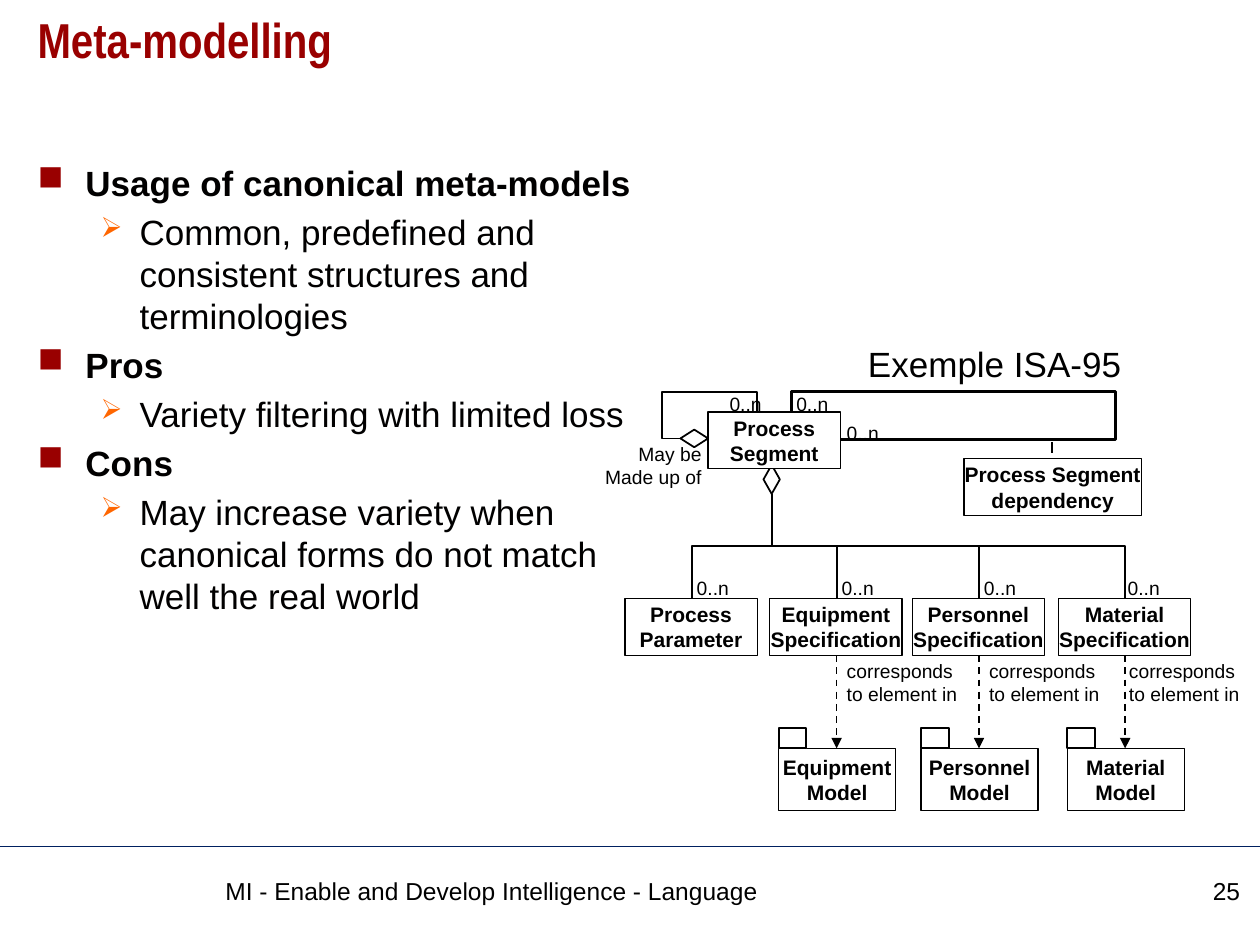
from dataclasses import dataclass
from typing import Optional

from lxml import etree
from pptx import Presentation
from pptx.dml.color import RGBColor
from pptx.enum.dml import MSO_LINE
from pptx.enum.shapes import MSO_CONNECTOR, MSO_SHAPE
from pptx.enum.text import MSO_ANCHOR, PP_ALIGN
from pptx.oxml.ns import qn
from pptx.util import Emu, Pt

EMU_PER_PX = 9144
BLACK = RGBColor(0x00, 0x00, 0x00)
WHITE = RGBColor(0xFF, 0xFF, 0xFF)
BODY_INK = RGBColor(0x01, 0x00, 0x00)
DARK_RED = RGBColor(0x99, 0x00, 0x00)
ORANGE = RGBColor(0xFF, 0x66, 0x00)
NAVY = RGBColor(0x00, 0x20, 0x60)
LEFT, CENTER, RIGHT = PP_ALIGN.LEFT, PP_ALIGN.CENTER, PP_ALIGN.RIGHT
TOP, MIDDLE = MSO_ANCHOR.TOP, MSO_ANCHOR.MIDDLE
RECTANGLE, DIAMOND = MSO_SHAPE.RECTANGLE, MSO_SHAPE.DIAMOND
STRAIGHT, ELBOW = MSO_CONNECTOR.STRAIGHT, MSO_CONNECTOR.ELBOW
DASH = MSO_LINE.DASH

ENTITY_WIDTH, ENTITY_HEIGHT = 105, 45
SPEC_TOP, MODEL_TOP = 475, 594
HUB = (613, 392)
MANY = "0..n"


@dataclass(frozen=True)
class Box:
    left: int
    top: int
    width: int
    height: int


@dataclass(frozen=True)
class Level:
    bullet: str
    color: RGBColor
    size: int
    margin: int
    hanging: int
    bold: bool


@dataclass(frozen=True)
class Branch:
    left: int
    entity: str
    many_left: int
    model: Optional[str] = None
    relation_left: int = 0


POINT = Level("■", DARK_RED, 100, 38, 38, True)
DETAIL = Level("➢", ORANGE, 80, 81, 31, False)
OUTLINE = [
    (POINT, "Usage of canonical meta-models"),
    (DETAIL, "Common, predefined and consistent structures and terminologies"),
    (POINT, "Pros"),
    (DETAIL, "Variety filtering with limited loss"),
    (POINT, "Cons"),
    (DETAIL, "May increase variety when canonical forms do not match well the real world"),
]
BRANCHES = [
    Branch(496, "Process\nParameter", 553),
    Branch(611, "Equipment\nSpecification", 668, "Equipment\nModel", 672),
    Branch(724, "Personnel\nSpecification", 781, "Personnel\nModel", 785),
    Branch(840, "Material\nSpecification", 895, "Material\nModel", 896),
]


def px(length: float) -> Emu:
    return Emu(round(length * EMU_PER_PX))


def frame(box: Box) -> tuple:
    return px(box.left), px(box.top), px(box.width), px(box.height)


def write(holder, text: str, *, size: int, color=BLACK, font="Arial", bold=False,
          align=LEFT, anchor=TOP, inset=(10, 5), wrap=True, line_spacing=None) -> None:
    area = holder.text_frame
    area.word_wrap = wrap
    area.vertical_anchor = anchor
    area.margin_left = area.margin_right = px(inset[0])
    area.margin_top = area.margin_bottom = px(inset[1])
    for index, words in enumerate(text.split("\n")):
        paragraph = area.add_paragraph() if index else area.paragraphs[0]
        paragraph.alignment = align
        if line_spacing:
            paragraph.line_spacing = line_spacing
        run = paragraph.add_run()
        run.text = words
        run.font.name, run.font.size, run.font.bold = font, Pt(size), bold
        run.font.color.rgb = color


def text_box(slide, box: Box, text: str, **text_format) -> object:
    holder = slide.shapes.add_textbox(*frame(box))
    write(holder, text, **text_format)
    return holder


def label(slide, box: Box, text: str, align=LEFT) -> None:
    text_box(slide, box, text, size=11, align=align, inset=(0, 0), wrap=False)


def many(slide, left: int, top: int) -> None:
    label(slide, Box(left, top, 26, 19), MANY)


def outlined(slide, box: Box, kind=RECTANGLE, weight: float = 1):
    figure = slide.shapes.add_shape(kind, *frame(box))
    figure.shadow.inherit = False
    figure.fill.solid()
    figure.fill.fore_color.rgb = WHITE
    figure.line.color.rgb = BLACK
    figure.line.width = Pt(weight)
    return figure


def entity(slide, box: Box, text: str) -> None:
    write(outlined(slide, box, weight=0.75), text, size=12, bold=True,
          align=CENTER, anchor=MIDDLE, inset=(0, 0))


def connect(slide, start: tuple, end: tuple, kind=STRAIGHT, color=BLACK,
            weight: float = 1, dash=None, arrow=False):
    link = slide.shapes.add_connector(kind, *map(px, start + end))
    link.line.color.rgb = color
    link.line.width = Pt(weight)
    if dash:
        link.line.dash_style = dash
    properties = link._element.spPr
    if arrow:
        etree.SubElement(properties.find(qn("a:ln")), qn("a:tailEnd"), type="triangle")
    etree.SubElement(properties, qn("a:effectLst"))
    return link


def elbow(slide, start: tuple, end: tuple, preset: str, bends: list,
          weight: float = 1) -> None:
    (x0, y0), (x1, y1) = start, end
    run, rise = y1 - y0, abs(x1 - x0)
    left, top = (x0 + x1 - run) / 2, (y0 + y1 - rise) / 2
    link = connect(slide, (left, top), (left + run, top + rise), ELBOW, weight=weight)
    properties = link._element.spPr
    transform = properties.find(qn("a:xfrm"))
    transform.set("rot", str((90 if x1 < x0 else 270) * 60000))
    if x1 > x0:
        transform.set("flipH", "1")
    geometry = properties.find(qn("a:prstGeom"))
    geometry.set("prst", preset)
    guides = geometry.find(qn("a:avLst"))
    for number, bend in enumerate(bends, 1):
        etree.SubElement(guides, qn("a:gd"), name=f"adj{number}",
                         fmla=f"val {round(bend * 100000)}")


def outline(slide, box: Box) -> None:
    holder = text_box(slide, box, "\n".join(text for _, text in OUTLINE),
                      size=20, color=BODY_INK)
    for index, (level, _) in enumerate(OUTLINE):
        paragraph = holder.text_frame.paragraphs[index]
        properties = paragraph._p.get_or_add_pPr()
        properties.set("marL", str(px(level.margin)))
        properties.set("indent", str(-px(level.hanging)))
        tint = etree.SubElement(properties, qn("a:buClr"))
        etree.SubElement(tint, qn("a:srgbClr"), val=str(level.color))
        etree.SubElement(properties, qn("a:buSzPct"), val=str(level.size * 1000))
        etree.SubElement(properties, qn("a:buChar"), char=level.bullet)
        paragraph.space_before = Pt(4 if index else 0)
        paragraph.runs[0].font.bold = level.bold


def draw_branch(slide, branch: Branch) -> None:
    axis = branch.left + 53
    elbow(slide, HUB, (axis, SPEC_TOP), "bentConnector3", [0.5])
    entity(slide, Box(branch.left, SPEC_TOP, ENTITY_WIDTH, ENTITY_HEIGHT), branch.entity)
    many(slide, branch.many_left, 457)
    if branch.model:
        model_left = branch.left + 7
        entity(slide, Box(model_left, MODEL_TOP, 93, 49), branch.model)
        outlined(slide, Box(model_left, MODEL_TOP - 16, 22, 16))
        connect(slide, (axis, SPEC_TOP + ENTITY_HEIGHT), (axis, MODEL_TOP),
                dash=DASH, arrow=True)
        label(slide, Box(branch.relation_left, 523, 88, 37), "corresponds\nto element in")


def main() -> None:
    deck = Presentation()
    deck.slide_width, deck.slide_height = px(1000), px(750)
    slide = deck.slides.add_slide(deck.slide_layouts[6])
    connect(slide, (0, 672), (1000, 672), color=NAVY, weight=0.75)
    text_box(slide, Box(20, 8, 961, 83), "Meta-modelling", size=28, color=DARK_RED,
             font="Arial Narrow", bold=True, line_spacing=0.9)
    outline(slide, Box(20, 123, 504, 535))
    text_box(slide, Box(169, 690, 721, 45),
             "MI - Enable and Develop Intelligence - Language", size=14)
    text_box(slide, Box(902, 690, 92, 45), "25", size=14, align=RIGHT)
    text_box(slide, Box(679, 267, 223, 44), "Exemple ISA-95", size=20, wrap=False)

    outlined(slide, Box(606, 369, 13, 23), DIAMOND)
    entity(slide, Box(562, 327, ENTITY_WIDTH, ENTITY_HEIGHT), "Process\nSegment")
    for branch in BRANCHES:
        draw_branch(slide, branch)

    elbow(slide, (601, 327), (540, 348), "bentConnector4", [-0.75, 1.24])
    outlined(slide, Box(540, 341, 22, 14), DIAMOND)
    label(slide, Box(480, 351, 77, 37), "May be\nMade up of", RIGHT)
    entity(slide, Box(765, 364, 141, ENTITY_HEIGHT), "Process Segment\ndependency")
    elbow(slide, (628, 327), (667, 349), "bentConnector4", [-0.73, 6.6], weight=1.5)
    connect(slide, (835, 351), (835, 364), weight=1.5, dash=DASH)
    for left, top in [(632, 311), (579, 311), (672, 334)]:
        many(slide, left, top)
    deck.save("out.pptx")


if __name__ == "__main__":
    main()
